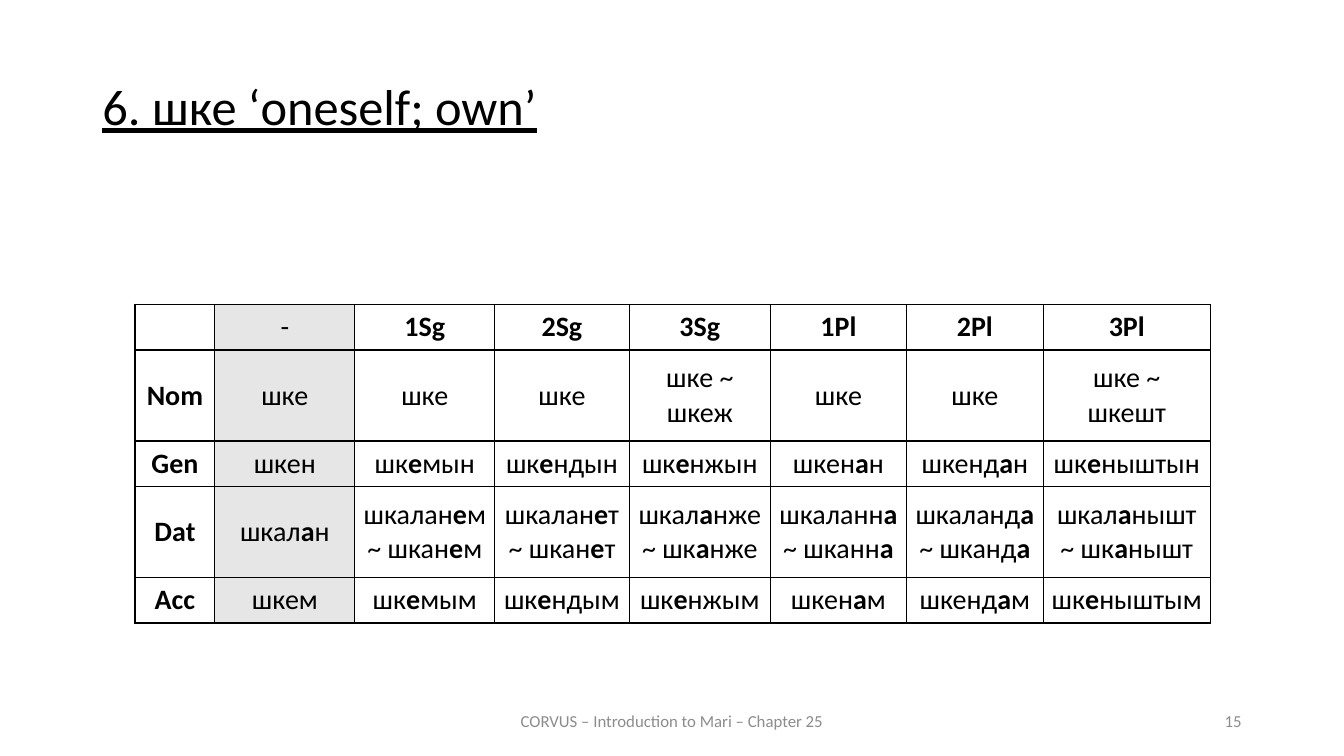
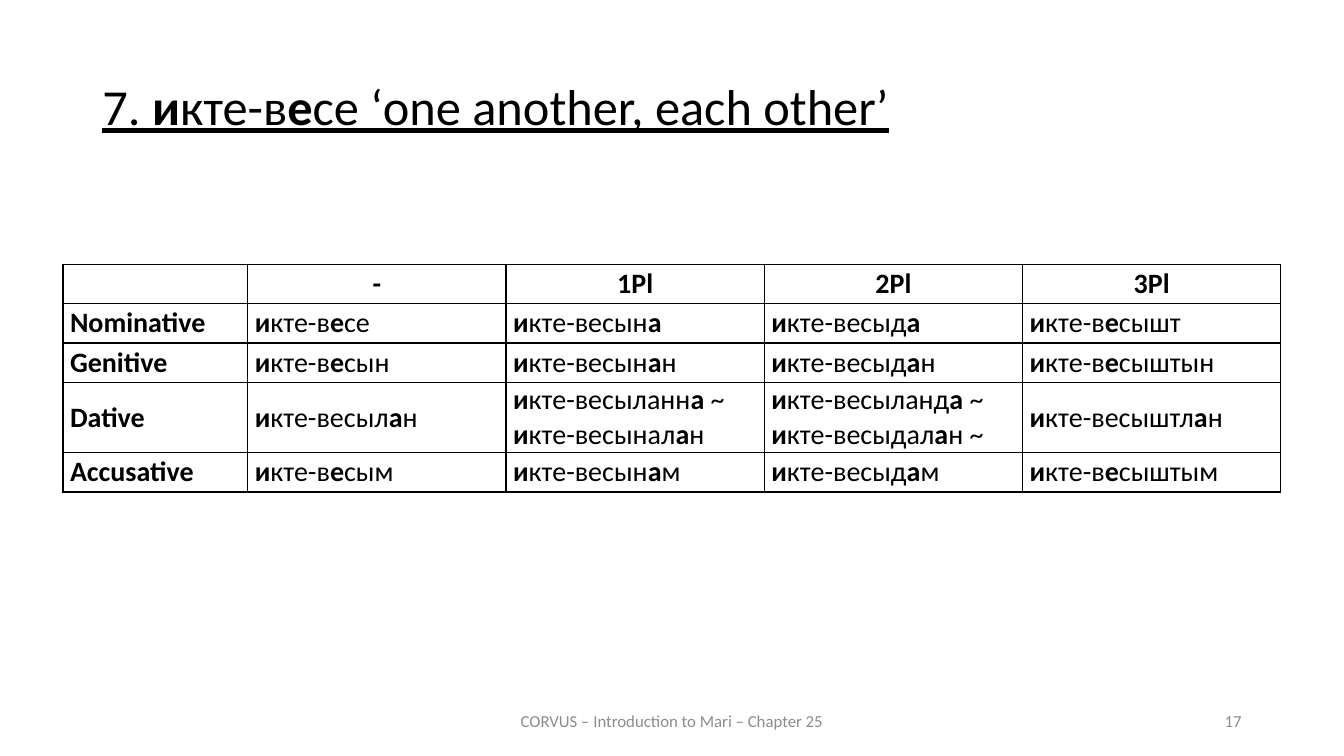
from lxml import etree
from pptx import Presentation
from pptx.dml.color import RGBColor
from pptx.enum.text import MSO_ANCHOR, MSO_AUTO_SIZE, PP_ALIGN
from pptx.oxml.ns import qn
from pptx.util import Pt

LEFT, MID, RIGHT = PP_ALIGN.LEFT, PP_ALIGN.CENTER, PP_ALIGN.RIGHT
TOP, MIDDLE = MSO_ANCHOR.TOP, MSO_ANCHOR.MIDDLE
NO_FIT = MSO_AUTO_SIZE.NONE
TITLE_ONLY = 5

FONT = "Calibri"
BLACK, GREY, SHADE = "000000", "8C8C8C", "E7E6E6"
FOOTER = "CORVUS – Introduction to Mari – Chapter 25"

# In all texts *stars* enclose bold letters and | starts a new paragraph.
SLIDES = [
    {
        "title": "6. шке ‘oneself; own’",
        "number": 15,
        "at": (96.5, 217.5),
        "cols": [57, 100, 100, 96, 101, 97, 98, 119],
        "heights": [32.5, 65, 32.5, 65, 32.5],
        "align": MID,
        "shaded": 1,
        "rows": [
            ["", "-", "*1Sg*", "*2Sg*", "*3Sg*", "*1Pl*", "*2Pl*", "*3Pl*"],
            ["*Nom*", "шке", "шке", "шке", "шке ~|шкеж", "шке", "шке",
             "шке ~|шкешт"],
            ["*Gen*", "шкен", "шк*е*мын", "шк*е*ндын", "шк*е*нжын",
             "шкен*а*н", "шкенд*а*н", "шк*е*ныштын"],
            ["*Dat*", "шкал*а*н", "шкалан*е*м|~ шкан*е*м",
             "шкалан*е*т|~ шкан*е*т", "шкал*а*нже|~ шк*а*нже",
             "шкаланн*а*|~ шканн*а*", "шкаланд*а*|~ шканд*а*",
             "шкал*а*нышт|~ шк*а*нышт"],
            ["*Acc*", "шкем", "шк*е*мым", "шк*е*ндым", "шк*е*нжым",
             "шкен*а*м", "шкенд*а*м", "шк*е*ныштым"],
        ],
    },
    {
        "title": "7. *и*кте-в*е*се ‘one another, each other’",
        "number": 17,
        "at": (45, 189),
        "cols": [132] + [184.5] * 4,
        "heights": [28, 28, 28, 50.5, 28],
        "align": LEFT,
        "shaded": None,
        "rows": [
            ["", "*-*", "*1Pl*", "*2Pl*", "*3Pl*"],
            ["*Nominative*", "*и*кте-в*е*се", "*и*кте-весын*а*",
             "*и*кте-весыд*а*", "*и*кте-в*е*сышт"],
            ["*Genitive*", "*и*кте-в*е*сын", "*и*кте-весын*а*н",
             "*и*кте-весыд*а*н", "*и*кте-в*е*сыштын"],
            ["*Dative*", "*и*кте-весыл*а*н",
             "*и*кте-весыланн*а* ~|*и*кте-весынал*а*н",
             "*и*кте-весыланд*а* ~|*и*кте-весыдал*а*н ~",
             "*и*кте-весыштл*а*н"],
            ["*Accusative*", "*и*кте-в*е*сым", "*и*кте-весын*а*м",
             "*и*кте-весыд*а*м", "*и*кте-в*е*сыштым"],
        ],
    },
]


def rgb(code):
    return RGBColor.from_string(code)


def write(frame, text, size, color, align):
    """Fill a text frame from marked-up text."""
    for i, line in enumerate(text.split("|")):
        para = frame.add_paragraph() if i else frame.paragraphs[0]
        para.alignment = align
        font = para.font
        font.name, font.size = FONT, Pt(size)
        font.color.rgb = rgb(color)
        for j, part in enumerate(line.split("*")):
            if part:
                run = para.add_run()
                run.text = part
                if j % 2:
                    run.font.bold = True


def add_title(slide, text):
    box = slide.shapes.title
    box.left, box.top, box.width, box.height = map(Pt, (66, 55, 828, 60))
    frame = box.text_frame
    frame.auto_size, frame.vertical_anchor = NO_FIT, TOP
    write(frame, text, 36, BLACK, LEFT)
    para = frame.paragraphs[0]
    para.line_spacing = 0.9
    para.font.underline = True


def add_note(slide, text, left, width, align):
    """Add one grey text of the footer line."""
    box = slide.shapes.add_textbox(Pt(left), Pt(500.5), Pt(width), Pt(28.5))
    frame = box.text_frame
    frame.word_wrap, frame.vertical_anchor = True, MIDDLE
    write(frame, text, 12, GREY, align)


def add_border(cell):
    props = cell._tc.get_or_add_tcPr()
    for side in ("lnL", "lnR", "lnT", "lnB"):
        line = etree.SubElement(props, qn("a:" + side), w=str(Pt(1)))
        fill = etree.SubElement(line, qn("a:solidFill"))
        etree.SubElement(fill, qn("a:srgbClr"), val=BLACK)


def add_grid(slide, data):
    rows, cols, heights = data["rows"], data["cols"], data["heights"]
    size = map(Pt, (*data["at"], sum(cols), sum(heights)))
    table = slide.shapes.add_table(len(rows), len(cols), *size).table
    table.first_row = table.horz_banding = False
    for col, width in zip(table.columns, cols):
        col.width = Pt(width)
    for row, height in zip(table.rows, heights):
        row.height = Pt(height)
    for r, texts in enumerate(rows):
        for c, text in enumerate(texts):
            cell = table.cell(r, c)
            cell.margin_left = cell.margin_right = Pt(5)
            cell.margin_top = cell.margin_bottom = 0
            cell.vertical_anchor = MIDDLE
            add_border(cell)
            if c == data["shaded"]:
                cell.fill.solid()
                cell.fill.fore_color.rgb = rgb(SHADE)
            else:
                cell.fill.background()
            align = data["align"] if r else MID
            write(cell.text_frame, text, 20, BLACK, align)


def main():
    deck = Presentation()
    deck.slide_width, deck.slide_height = Pt(960), Pt(540)
    for data in SLIDES:
        slide = deck.slides.add_slide(deck.slide_layouts[TITLE_ONLY])
        add_title(slide, data["title"])
        add_grid(slide, data)
        add_note(slide, FOOTER, 318, 324, MID)
        add_note(slide, str(data["number"]), 678, 216, RIGHT)
    deck.save("out.pptx")


if __name__ == "__main__":
    main()
